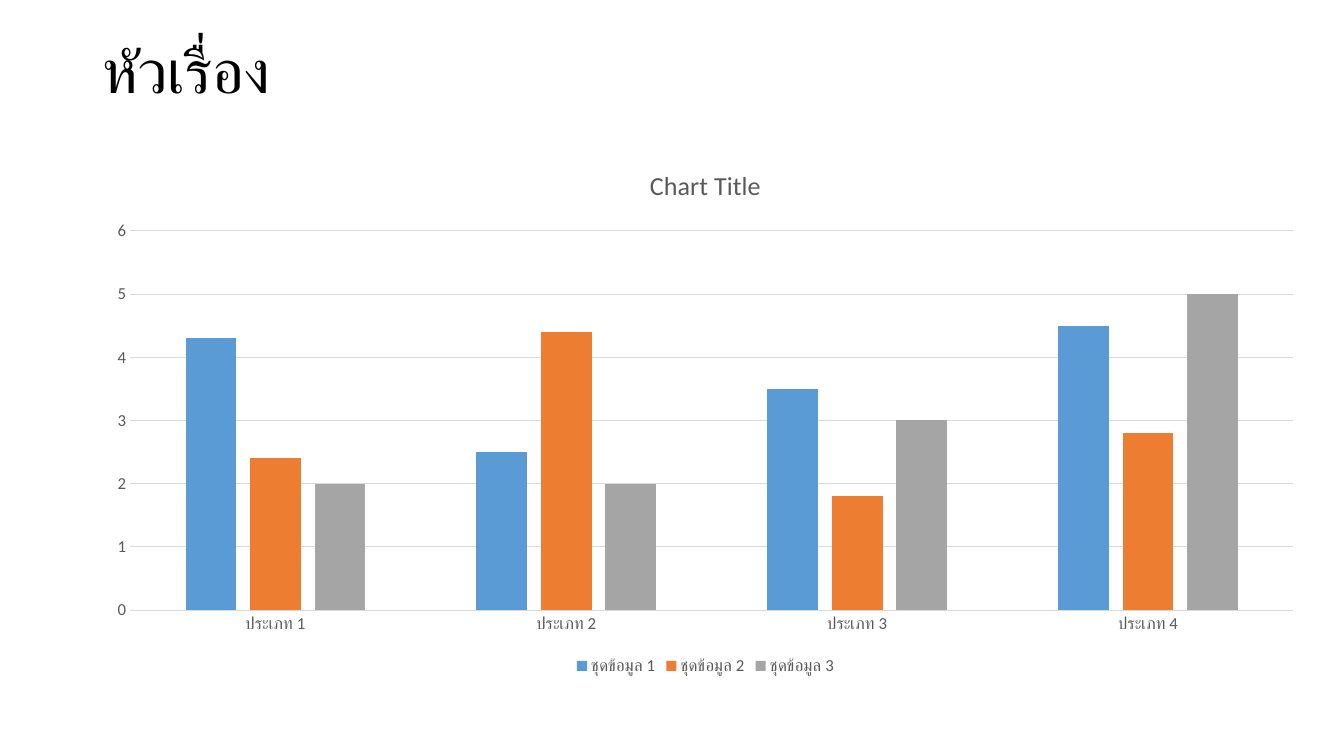
from pptx import Presentation
from pptx.chart.data import CategoryChartData
from pptx.dml.color import RGBColor
from pptx.enum.chart import XL_CHART_TYPE, XL_LEGEND_POSITION, XL_TICK_MARK
from pptx.enum.text import MSO_ANCHOR
from pptx.util import Pt

HEAD = "หัวเรื่อง"
NAME = "Chart Title"
CATS = [f"ประเภท {n}" for n in range(1, 5)]
ROWS = [
    ("ชุดข้อมูล 1", (4.3, 2.5, 3.5, 4.5)),
    ("ชุดข้อมูล 2", (2.4, 4.4, 1.8, 2.8)),
    ("ชุดข้อมูล 3", (2, 2, 3, 5)),
]
THEME = {
    "face": "Calibri",
    "ink": "000000",
    "gray": "595959",
    "rule": "D9D9D9",
    "bars": ("5B9BD5", "ED7D31", "A5A5A5"),
    "head": 44,
    "name": 18.6,
    "label": 12,
    "line": 0.75,
}
SIZE = (1344, 756)
LEFT, TOP, WIDE = 93, 1, 1225
HEAD_H, PLOT_H = 146, 534


def px(n):
    return round(n * 914400 / 100.8)


def style(font, size, color):
    font.name = THEME["face"]
    font.size = Pt(size)
    font.bold = False
    font.color.rgb = RGBColor.from_string(color)


def rule(line):
    line.color.rgb = RGBColor.from_string(THEME["rule"])
    line.width = Pt(THEME["line"])


def add_head(slide):
    box = slide.shapes.add_textbox(px(LEFT), px(TOP), px(WIDE), px(HEAD_H))
    frame = box.text_frame
    frame.word_wrap = True
    frame.vertical_anchor = MSO_ANCHOR.MIDDLE
    frame.text = HEAD
    para = frame.paragraphs[0]
    para.line_spacing = 0.9
    style(para.runs[0].font, THEME["head"], THEME["ink"])


def add_plot(slide):
    data = CategoryChartData()
    data.categories = CATS
    for name, vals in ROWS:
        data.add_series(name, vals)
    chart = slide.shapes.add_chart(
        XL_CHART_TYPE.COLUMN_CLUSTERED,
        px(LEFT), px(HEAD_H), px(WIDE), px(PLOT_H), data,
    ).chart
    style(chart.font, THEME["label"], THEME["gray"])

    chart.has_title = True
    frame = chart.chart_title.text_frame
    frame.text = NAME
    style(frame.paragraphs[0].runs[0].font, THEME["name"], THEME["gray"])
    chart.chart_title.include_in_layout = False

    chart.has_legend = True
    chart.legend.position = XL_LEGEND_POSITION.BOTTOM
    chart.legend.include_in_layout = False
    style(chart.legend.font, THEME["label"], THEME["gray"])

    for axis in (chart.category_axis, chart.value_axis):
        axis.major_tick_mark = XL_TICK_MARK.NONE
        axis.minor_tick_mark = XL_TICK_MARK.NONE
        style(axis.tick_labels.font, THEME["label"], THEME["gray"])
    rule(chart.category_axis.format.line)
    scale = chart.value_axis
    scale.minimum_scale, scale.maximum_scale, scale.major_unit = 0, 6, 1
    scale.format.line.fill.background()
    scale.has_major_gridlines = True
    rule(scale.major_gridlines.format.line)

    plot = chart.plots[0]
    plot.gap_width = 219
    plot.overlap = -27
    plot.vary_by_categories = False
    for bar, color in zip(plot.series, THEME["bars"]):
        bar.format.fill.solid()
        bar.format.fill.fore_color.rgb = RGBColor.from_string(color)


def main():
    deck = Presentation()
    deck.slide_width, deck.slide_height = map(px, SIZE)
    slide = deck.slides.add_slide(deck.slide_layouts[6])
    add_head(slide)
    add_plot(slide)
    deck.save("out.pptx")


if __name__ == "__main__":
    main()
